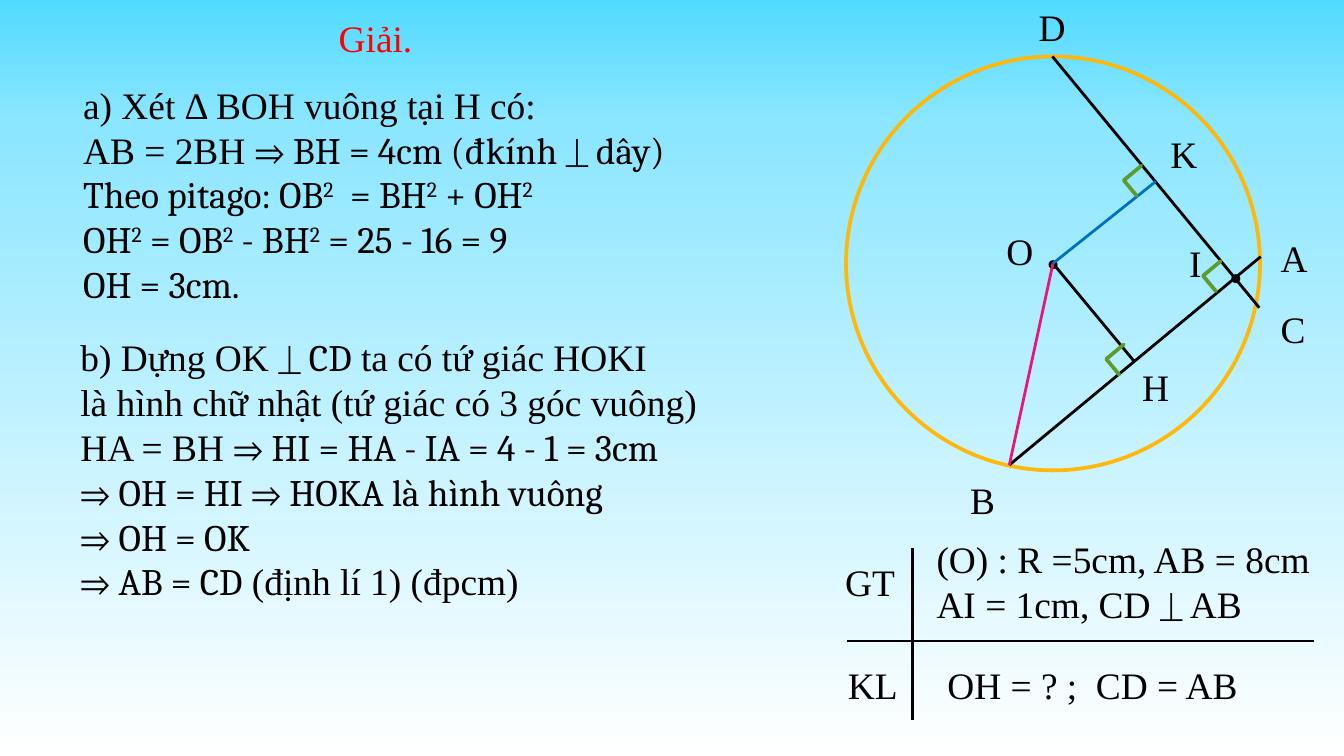
from copy import deepcopy
from dataclasses import dataclass
from typing import NamedTuple

from lxml.etree import SubElement
from pptx import Presentation
from pptx.dml.color import RGBColor
from pptx.enum.shapes import MSO_CONNECTOR, MSO_SHAPE
from pptx.enum.text import MSO_ANCHOR, MSO_AUTO_SIZE, PP_ALIGN
from pptx.oxml.ns import qn
from pptx.util import Inches, Length, Pt

COLUMNS = 100  # square cells of a tenth of an inch
ROWS = COLUMNS * 9 / 16


@dataclass(frozen=True)
class Theme:
    text: str = "000000"
    title: str = "FF0000"
    circle: str = "FEB80A"
    radius: str = "EA157A"
    distance: str = "0070C0"
    mark_fill: str = "7FD13B"
    mark_line: str = "5E9B2C"
    sky: tuple = ((0, "51DAFF"), (0.16, "8BE6FF"), (1, "FFFFFF"))
    body_font: str = "Times New Roman"
    math_font: str = "Cambria"
    size: float = 20
    thin: float = 1.5
    thick: float = 2


class Point(NamedTuple):
    x: float
    y: float


class Segment(NamedTuple):
    start: Point
    end: Point
    color: str


class TextBlock(NamedTuple):
    """In paragraphs, | switches between body and math font, ^ toggles superscript."""
    left: float
    top: float
    width: float
    height: float
    paragraphs: tuple[str, ...]


THEME = Theme()
A, B, C, D = Point(93.8, 19.1), Point(75.1, 34.6), Point(93.7, 22.9), Point(78.3, 4.2)
O, H, K = Point(78.35, 19.6), Point(84.4, 26.9), Point(86, 13.5)
RADIUS = 15.4

SEGMENTS = (
    Segment(B, A, THEME.text),
    Segment(D, C, THEME.text),
    Segment(O, H, THEME.text),
    Segment(O, B, THEME.radius),
    Segment(O, K, THEME.distance),
    Segment(Point(63, 47.7), Point(97.8, 47.7), THEME.text),
    Segment(Point(67.9, 40.8), Point(67.9, 53.6), THEME.text),
)
RIGHT_ANGLES = (Point(82.6, 26), Point(89.8, 19.8), Point(83.9, 12.7))
LINE_LABELS = (
    ("•", 76.9, 17.4, 3), ("•", 90.5, 18.4, 3),
    ("O", 73.9, 16.5, 4.1), ("A", 94.3, 17, 4.1), ("B", 71.2, 35, 3.9),
    ("C", 94.3, 22.3, 3.9), ("D", 76.3, -0.2, 4.1), ("H", 84, 26.6, 4.1),
    ("I", 87.5, 17.4, 2.9), ("K", 86.1, 9.3, 4.1),
    ("GT", 61.9, 41.1, 5.8), ("KL", 62.1, 48.8, 5.8),
    ("OH = ? ;  CD = AB", 69.5, 48.8, 23.8),
)
TITLE = TextBlock(24.2, 0.6, 7.5, 4.4, ("Giải.",))
PASSAGES = (
    TextBlock(68.7, 39.4, 30, 7.7, (
        "(O) : R =5cm, AB = 8cm",
        "AI = 1cm, CD |⏊| AB",
    )),
    TextBlock(5.2, 5.6, 47.9, 17.8, (
        "a) Xét Δ BOH vuông tại H có:",
        "AB = 2BH |⇒ BH = 4cm (đkính ⏊ dây)",
        "|Theo pitago: OB^2^  = BH^2^ + OH^2",
        "|OH^2^ = OB^2^ - BH^2^ = 25 - 16 = 9",
        "|OH = 3cm.",
    )),
    TextBlock(5, 24.4, 48.3, 21.2, (
        "b) Dựng OK |⏊ CD| ta có tứ giác HOKI",
        "là hình chữ nhật (tứ giác có 3 góc vuông)",
        "HA = BH |⇒ HI = HA - IA = 4 - 1 = 3cm",
        "|⇒ OH = HI ⇒ HOKA là hình vuông",
        "|⇒ OH = OK",
        "|⇒ AB = CD| (định lí 1) (đpcm)",
    )),
)


def cells(count: float) -> Length:
    return Inches(count / 10)


def rgb(color: str) -> RGBColor:
    return RGBColor.from_string(color)


def paint_background(slide) -> None:
    fill = slide.background.fill
    fill.gradient()
    fill.gradient_angle = 270
    stop_list = slide.background._cSld.xpath(".//a:gsLst")[0]
    stop_list.append(deepcopy(stop_list[0]))
    for stop, (position, color) in zip(fill.gradient_stops, THEME.sky):
        stop.position = position
        stop.color.rgb = rgb(color)


def write_text(holder, block: TextBlock, color: str) -> None:
    frame = holder.text_frame
    layout = {"word_wrap": False, "auto_size": MSO_AUTO_SIZE.SHAPE_TO_FIT_TEXT,
              "vertical_anchor": MSO_ANCHOR.TOP}
    for attribute, value in layout.items():
        setattr(frame, attribute, value)
    for index, content in enumerate(block.paragraphs):
        paragraph = frame.add_paragraph() if index else frame.paragraphs[0]
        paragraph.alignment = PP_ALIGN.LEFT
        for font_index, stretch in enumerate(content.split("|")):
            face = THEME.math_font if font_index % 2 else THEME.body_font
            for level, words in enumerate(stretch.split("^")):
                if not words:
                    continue
                run = paragraph.add_run()
                run.text = words
                for attribute, value in {"name": face, "size": Pt(THEME.size)}.items():
                    setattr(run.font, attribute, value)
                run.font.color.rgb = rgb(color)
                # Arrows and other symbols take the East Asian typeface.
                SubElement(run.font._element, qn("a:ea"), typeface=THEME.math_font)
                if level % 2:
                    run.font._element.set("baseline", "30000")


def place(holder, block: TextBlock) -> None:
    for side in ("left", "top", "width", "height"):
        setattr(holder, side, cells(getattr(block, side)))


def add_text(slide, block: TextBlock) -> None:
    holder = slide.shapes.add_textbox(0, 0, 0, 0)
    write_text(holder, block, THEME.text)
    place(holder, block)


def add_segment(slide, segment: Segment) -> None:
    ends = (cells(value) for value in (*segment.start, *segment.end))
    connector = slide.shapes.add_connector(MSO_CONNECTOR.STRAIGHT, *ends)
    connector.line.color.rgb = rgb(segment.color)
    connector.line.width = Pt(THEME.thin)
    SubElement(connector._element.spPr, qn("a:effectLst"))


def add_outline(slide, kind: MSO_SHAPE, corner: Point, width: float, height: float, color: str):
    outline = slide.shapes.add_shape(
        kind, *(cells(value) for value in (*corner, width, height)))
    outline.shadow.inherit = False
    outline.fill.background()
    outline.line.color.rgb = rgb(color)
    outline.line.width = Pt(THEME.thick)
    return outline


def add_right_angle(slide, corner: Point) -> None:
    mark = add_outline(slide, MSO_SHAPE.HALF_FRAME, corner, 1.7, 1.5, THEME.mark_line)
    mark.rotation = 320.2
    mark.fill.solid()
    mark.fill.fore_color.rgb = rgb(THEME.mark_fill)
    for index in range(2):
        mark.adjustments[index] = 0


def main() -> None:
    deck = Presentation()
    deck.slide_width, deck.slide_height = cells(COLUMNS), cells(ROWS)
    slide = deck.slides.add_slide(deck.slide_layouts[5])
    paint_background(slide)
    write_text(slide.shapes.title, TITLE, THEME.title)
    place(slide.shapes.title, TITLE)
    add_outline(slide, MSO_SHAPE.OVAL, Point(O.x - RADIUS, O.y - RADIUS),
                2 * RADIUS, 2 * RADIUS, THEME.circle)
    for words, left, top, width in LINE_LABELS:
        add_text(slide, TextBlock(left, top, width, 4.4, (words,)))
    for segment in SEGMENTS:
        add_segment(slide, segment)
    for corner in RIGHT_ANGLES:
        add_right_angle(slide, corner)
    for passage in PASSAGES:
        add_text(slide, passage)
    deck.save("out.pptx")


if __name__ == "__main__":
    main()
